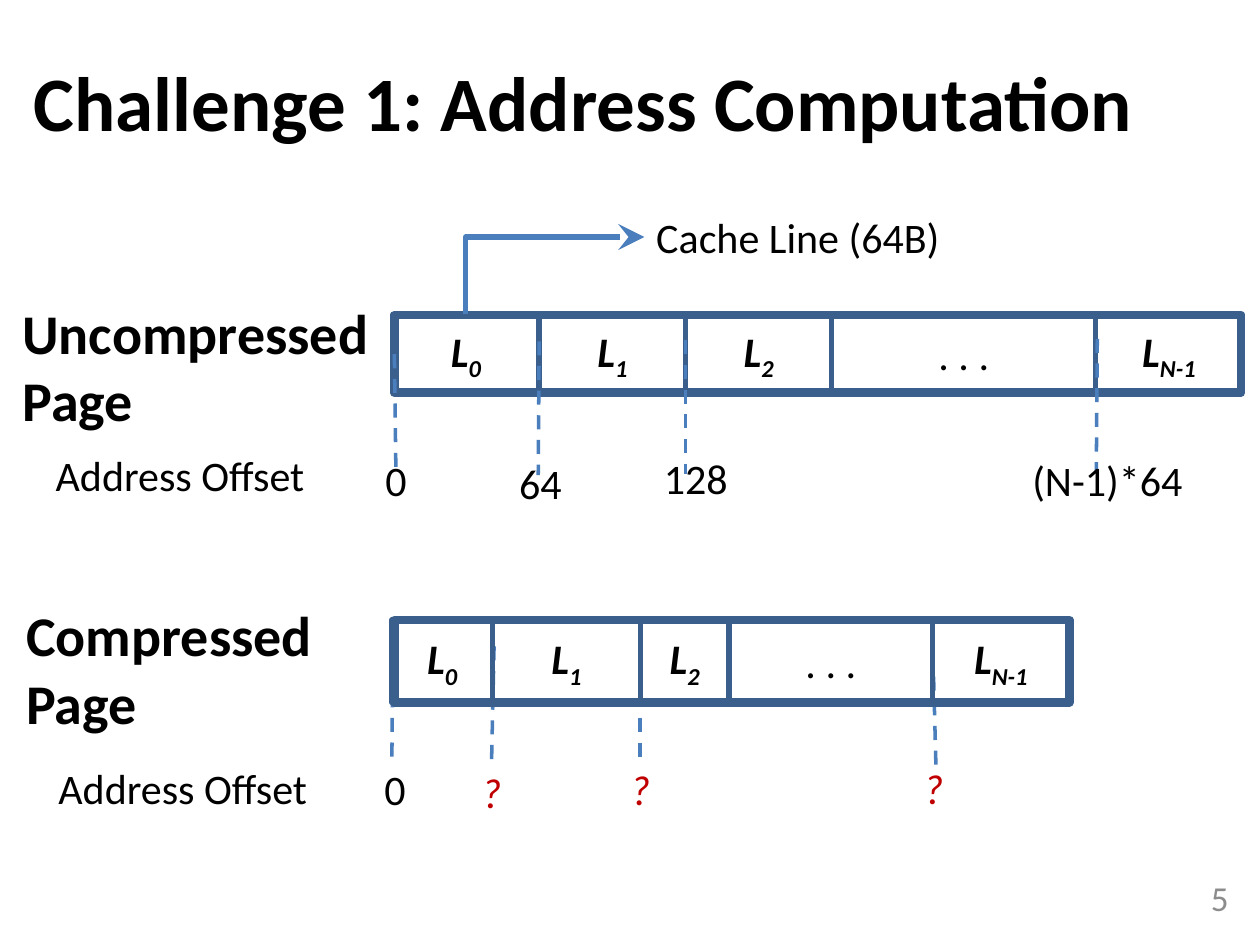
from lxml import etree
from pptx import Presentation
from pptx import util as u
from pptx.dml.color import RGBColor
from pptx.enum import dml, shapes, text
from pptx.oxml.ns import qn

FONT = "Calibri"
BLACK, RED, GREY = "000000", "C00000", "8C8C8C"
BORDER, LINE = "3A5F8C", "4B7EBC"
LEFT, CENTER, RIGHT = text.PP_ALIGN.LEFT, text.PP_ALIGN.CENTER, text.PP_ALIGN.RIGHT
CELLS = [("L", "0"), ("L", "1"), ("L", "2"), (". . .", ""), ("L", "N-1")]


def color(value):
    return RGBColor.from_string(value)


def write(tf, content, sub="", size=24, fill=BLACK, bold=False, italic=False,
          align=CENTER, anchor=text.MSO_ANCHOR.TOP):
    """Fill a text frame with one paragraph and an optional subscript."""
    tf.word_wrap = True
    tf.vertical_anchor = anchor
    p = tf.paragraphs[0]
    p.alignment = align
    for part in filter(None, (content, sub)):
        r = p.add_run()
        r.text = part
        r.font.name, r.font.size = FONT, u.Pt(size)
        r.font.bold, r.font.italic = bold, italic
        r.font.color.rgb = color(fill)
    if sub:
        r.font._element.set("baseline", "-25000")


def add_text(s, content, x, y, w, h=1.27, **fmt):
    sp = s.shapes.add_textbox(u.Cm(x), u.Cm(y), u.Cm(w), u.Cm(h))
    write(sp.text_frame, content, **fmt)


def add_box(s, x, y, w, h, width):
    sp = s.shapes.add_shape(shapes.MSO_SHAPE.RECTANGLE,
                            u.Cm(x), u.Cm(y), u.Cm(w), u.Cm(h))
    sp.shadow.inherit = False
    sp.fill.background()
    sp.line.color.rgb = color(BORDER)
    sp.line.width = u.Pt(width)
    return sp


def add_line(s, x1, y1, x2, y2, width=2, kind=shapes.MSO_CONNECTOR.STRAIGHT):
    sp = s.shapes.add_connector(kind, u.Cm(x1), u.Cm(y1), u.Cm(x2), u.Cm(y2))
    sp.line.color.rgb = color(LINE)
    sp.line.width = u.Pt(width)
    etree.SubElement(sp._element.spPr, qn("a:effectLst"))
    return sp


def add_dashes(s, lines):
    for ends in lines:
        add_line(s, *ends).line.dash_style = dml.MSO_LINE.DASH


def add_callout_arrow(s):
    """Arrow that runs up from the first cell, then right to its label."""
    sp = add_line(s, 11.97, 7.36, 10.41, 3.76, 3, shapes.MSO_CONNECTOR.ELBOW)
    pr = sp._element.spPr
    pr.find(qn("a:xfrm")).set("rot", str(90 * 60000))
    pr.find(qn("a:prstGeom")).set("prst", "bentConnector2")
    etree.SubElement(pr.find(qn("a:ln")), qn("a:tailEnd"),
                     type="stealth", w="lg", len="lg")


def add_page(s, x, y, h, widths, outline_width):
    """Row of cache lines inside a heavy page outline."""
    for (label, sub), w in zip(CELLS, widths):
        sp = add_box(s, x, y, w, h, 3)
        tf = sp.text_frame
        tf.margin_left = tf.margin_right = 0
        write(tf, label, sub=sub, bold=bool(sub), italic=bool(sub),
              anchor=text.MSO_ANCHOR.MIDDLE)
        x += w
    add_box(s, 7.95, y, outline_width, h, 5)


def main():
    prs = Presentation()
    prs.slide_width, prs.slide_height = u.Cm(25.4), u.Cm(19.05)
    s = prs.slides.add_slide(prs.slide_layouts[5])

    # Title and page number
    title = s.shapes.title
    title.left, title.top = u.Cm(0.43), u.Cm(0.43)
    title.width, title.height = u.Cm(22.86), u.Cm(3.18)
    write(title.text_frame, "Challenge 1: Address Computation", size=44,
          bold=True, align=LEFT, anchor=text.MSO_ANCHOR.MIDDLE)
    add_text(s, "5", 19.1, 17.58, 5.92, 1.02, size=20, fill=GREY, align=RIGHT,
             anchor=text.MSO_ANCHOR.MIDDLE)

    # Uncompressed page
    add_page(s, 7.92, 6.35, 1.57, [2.95, 2.95, 2.95, 5.32, 2.95], 17.07)
    add_dashes(s, [(7.95, 7.14, 7.98, 9.42), (10.87, 6.88, 10.85, 9.58),
                   (13.82, 6.86, 13.82, 9.55), (22.12, 6.83, 22.1, 9.53)])
    add_callout_arrow(s)
    add_text(s, "Cache Line (64B)", 12.98, 4.14, 6.38, align=LEFT)
    add_text(s, "Uncompressed Page", 0.2, 5.89, 8.69, 3, size=32, bold=True,
             align=LEFT)
    add_text(s, "Address Offset", 0.2, 8.94, 6.86)
    for label, x, y, w in [("0", 7.06, 9.04, 1.85), ("64", 9.83, 9.09, 2.13),
                           ("128", 12.55, 8.99, 2.95),
                           ("(N-1)*64", 19.25, 9.04, 6.15)]:
        add_text(s, label, x, y, w)

    # Compressed page
    add_dashes(s, [(7.92, 12.98, 7.9, 15.27), (9.96, 13.03, 9.91, 15.32),
                   (12.9, 12.98, 12.9, 15.27), (18.82, 13.64, 18.87, 15.54)])
    add_page(s, 7.9, 12.5, 1.66, [2.03, 2.98, 1.79, 4.1, 2.75], 13.61)
    add_text(s, "Compressed Page", 0.28, 11.99, 7.62, 3, size=32, bold=True,
             align=LEFT)
    add_text(s, "Address Offset", 0.28, 15.24, 6.81)
    add_text(s, "0", 7.04, 15.27, 1.85)
    for x, y in [(9.07, 15.32), (12.07, 15.27), (17.98, 15.24)]:
        add_text(s, "?", x, y, 1.68, fill=RED, italic=True)

    prs.save("out.pptx")


if __name__ == "__main__":
    main()
